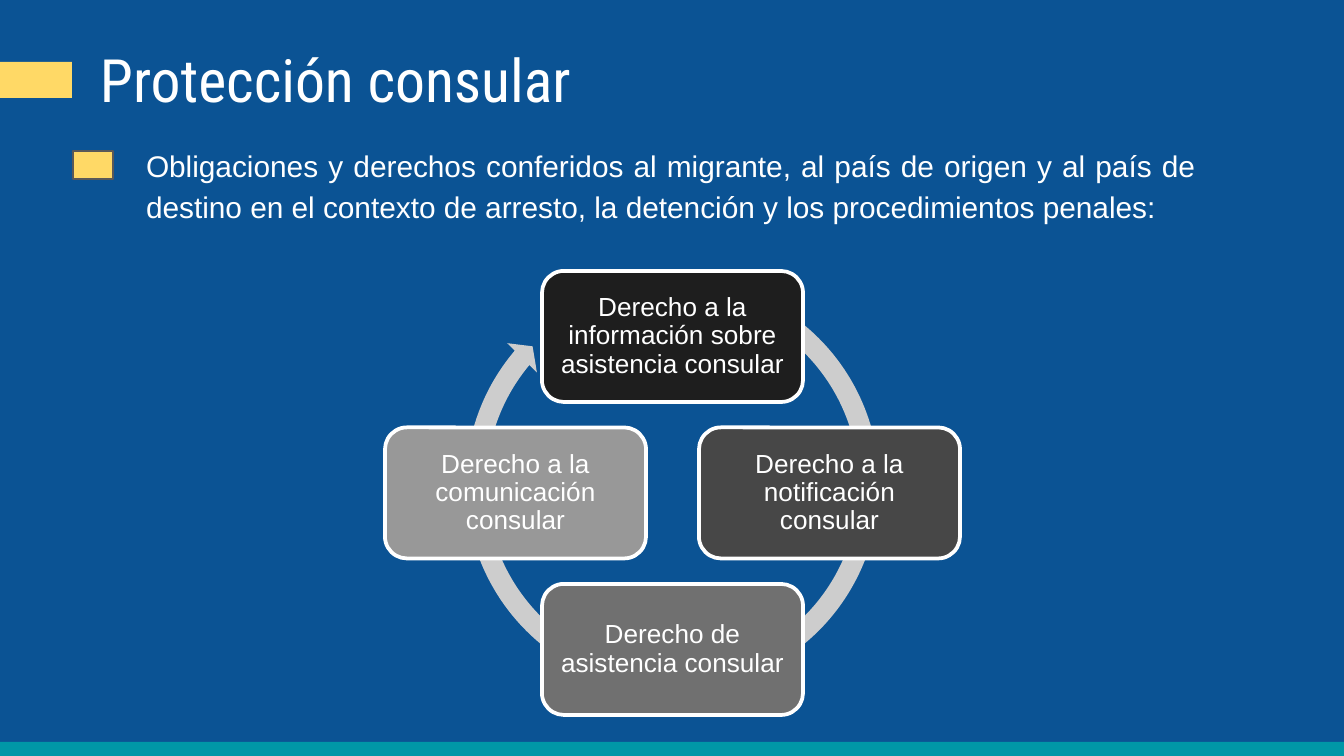
from pptx import Presentation
from pptx.dml.color import RGBColor
from pptx.enum.shapes import MSO_SHAPE as SHAPE
from pptx.enum.text import MSO_ANCHOR as ANCHOR, PP_ALIGN as ALIGN
from pptx.util import Emu, Pt

PX = 914400 / 134.4
WHITE, YELLOW = "FFFFFF", "FFD966"
RIGHTS = [  # clockwise from the top: direction from the centre, fill, text
    (0, -1, "1E1E1E", "Derecho a la información sobre asistencia consular"),
    (1, 0, "474747", "Derecho a la notificación consular"),
    (0, 1, "707070", "Derecho de asistencia consular"),
    (-1, 0, "989898", "Derecho a la comunicación consular"),
]


def px(n):
    return Emu(round(n * PX))


def rgb(color):
    return RGBColor.from_string(color)


def add_shape(shapes, kind, box, fill, line=None, width=1):
    sp = shapes.add_shape(kind, *map(px, box))
    sp.shadow.inherit = False
    sp.fill.solid()
    sp.fill.fore_color.rgb = rgb(fill)
    if line:
        sp.line.color.rgb = rgb(line)
        sp.line.width = Pt(width)
    else:
        sp.line.fill.background()
    return sp


def write(sp, text, size, inset, font="Arial", align=ALIGN.LEFT,
          spacing=0.9, anchor=ANCHOR.TOP):
    tf = sp.text_frame
    tf.word_wrap = True
    tf.vertical_anchor = anchor
    tf.margin_left = tf.margin_right = px(inset)
    tf.margin_top = tf.margin_bottom = px(inset)
    p = tf.paragraphs[0]
    p.text = text
    p.alignment, p.line_spacing = align, spacing
    p.font.name, p.font.size = font, Pt(size)
    p.font.color.rgb = rgb(WHITE)


def add_title(s, x, y, w, h):
    add_shape(s.shapes, SHAPE.RECTANGLE, (x, y + 24, 87, 36), YELLOW)
    tb = s.shapes.add_textbox(px(x + 102), px(y), px(w - 102), px(h))
    write(tb, "Protección consular", 32, 13, font="Roboto Condensed")


def add_intro(s, x, y, w, h):
    add_shape(s.shapes, SHAPE.RECTANGLE, (x, y + 22, 40, 28), YELLOW, "595959", 0.75)
    tb = s.shapes.add_textbox(px(x + 60), px(y), px(w - 60), px(h))
    write(tb, "Obligaciones y derechos conferidos al migrante, al país de origen "
          "y al país de destino en el contexto de arresto, la detención y los "
          "procedimientos penales:", 16, 13, align=ALIGN.JUSTIFY, spacing=1.15)


def add_cycle(s, x, y, w, h):
    """Four rounded boxes around the centre, over a circular arrow."""
    shapes = s.shapes.add_group_shape().shapes
    ring, node_w, node_h = 435, 261, 131
    arrow = add_shape(shapes, SHAPE.CIRCULAR_ARROW,
                      (x + (w - ring) / 2, y - 4, ring, ring), "CDCDCD")
    for i, value in enumerate((0.047, 2.729, 132.055, 177.813, 0.048)):
        arrow.adjustments[i] = value
    reach_x, reach_y = (w - node_w) / 2, (h - node_h) / 2
    for dx, dy, fill, text in RIGHTS:
        box = (x + reach_x * (1 + dx), y + reach_y * (1 + dy), node_w, node_h)
        node = add_shape(shapes, SHAPE.ROUNDED_RECTANGLE, box, fill, WHITE, 2)
        write(node, text, 14, 8, align=ALIGN.CENTER, anchor=ANCHOR.MIDDLE)


def main():
    prs = Presentation()
    prs.slide_width, prs.slide_height = px(1344), px(756)
    s = prs.slides.add_slide(prs.slide_layouts[6])
    s.background.fill.solid()
    s.background.fill.fore_color.rgb = rgb("0B5394")
    add_title(s, -15, 38, 1203, 130)
    add_intro(s, 73, 129, 1136, 136)
    add_shape(s.shapes, SHAPE.RECTANGLE, (0, 742, 1344, 14), "0097A7")
    add_cycle(s, 385, 271, 575, 444)
    prs.save("out.pptx")


if __name__ == "__main__":
    main()
